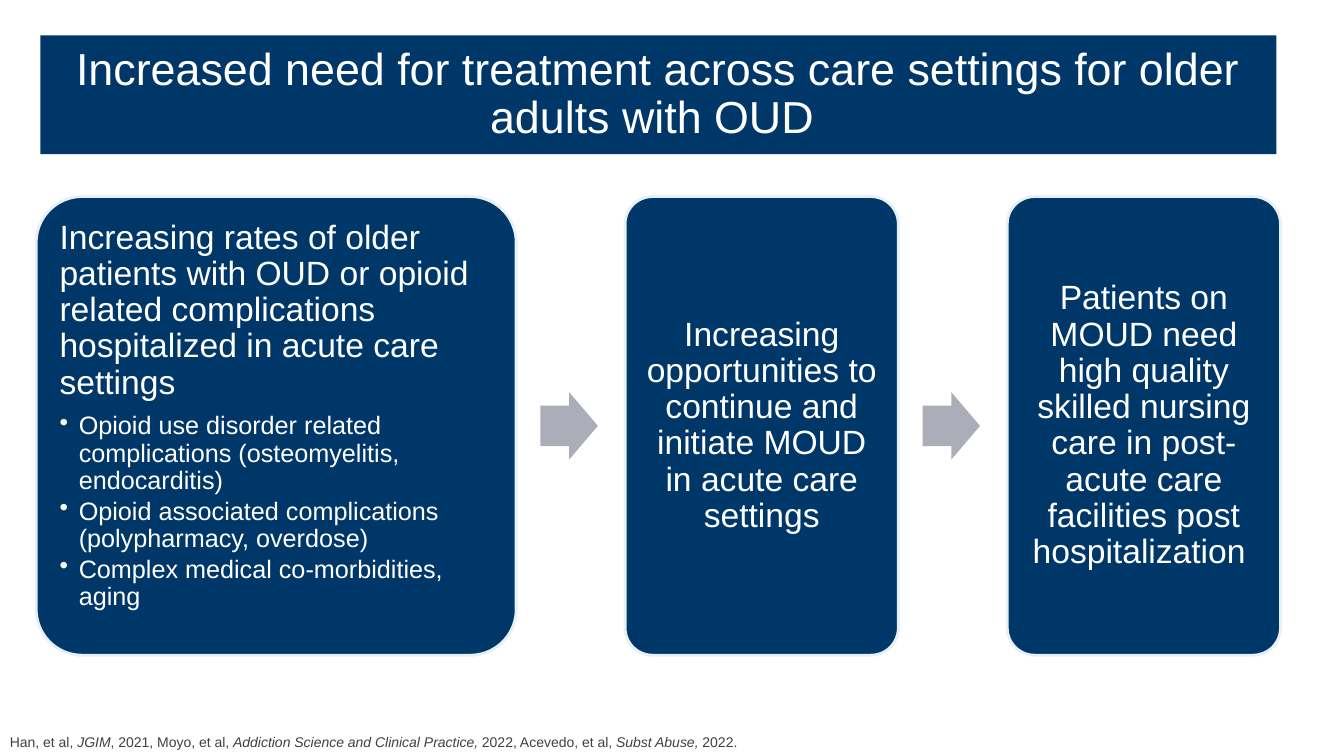
from lxml import etree
from pptx import Presentation
from pptx.dml.color import RGBColor
from pptx.enum.shapes import MSO_SHAPE
from pptx.enum.text import MSO_ANCHOR, MSO_AUTO_SIZE, PP_ALIGN
from pptx.oxml.ns import qn
from pptx.util import Inches, Pt

ROUNDED, ARROW = MSO_SHAPE.ROUNDED_RECTANGLE, MSO_SHAPE.RIGHT_ARROW
TOP, MIDDLE = MSO_ANCHOR.TOP, MSO_ANCHOR.MIDDLE
LEFT, CENTER = PP_ALIGN.LEFT, PP_ALIGN.CENTER
NO_FIT, GROW = MSO_AUTO_SIZE.NONE, MSO_AUTO_SIZE.SHAPE_TO_FIT_TEXT

COLORS = {"navy": "003769", "edge": "E6F0F5", "arrow": "ABAEB9",
          "white": "FFFFFF", "source": "414042"}
FONT = "Arial"
TITLE = "Increased need for treatment across care settings for older adults with OUD "
STEPS = [
    (4.76, "Increasing rates of older patients with OUD or opioid related complications "
           "hospitalized in acute care settings",
     ["Opioid use disorder related complications (osteomyelitis, endocarditis)",
      "Opioid associated complications (polypharmacy, overdose)",
      "Complex medical co-morbidities, aging"]),
    (2.71, "Increasing opportunities to continue and initiate MOUD in acute care settings", []),
    (2.71, "Patients on MOUD need high quality skilled nursing care in post-acute care "
           "facilities post hospitalization ", []),
]
SOURCES = [("Han, et al, ", False), ("JGIM", True), (", 2021, Moyo, et al, ", False),
           ("Addiction Science and Clinical Practice, ", True),
           ("2022, Acevedo, et al, ", False), ("Subst Abuse, ", True), ("2022.", False)]


def paint(shape, color):
    """Fill a shape with a named colour, without shadow or outline."""
    shape.shadow.inherit = False
    shape.fill.solid()
    shape.fill.fore_color.rgb = RGBColor.from_string(COLORS[color])
    shape.line.fill.background()


def set_frame(frame, inset, anchor):
    """Give a text frame wrapping, equal insets and an anchor."""
    frame.auto_size = NO_FIT
    frame.word_wrap = True
    frame.vertical_anchor = anchor
    frame.margin_left = frame.margin_right = Inches(inset)
    frame.margin_top = frame.margin_bottom = Inches(inset)


def set_paragraph(paragraph, size, color="white", align=LEFT, spacing=0.9, after=0.0):
    """Format a paragraph; the space after is a share of the text size."""
    paragraph.font.name = FONT
    paragraph.font.size = Pt(size)
    paragraph.font.color.rgb = RGBColor.from_string(COLORS[color])
    paragraph.alignment = align
    paragraph.line_spacing = spacing
    paragraph.space_before = Pt(0)
    paragraph.space_after = Pt(round(size * after, 1))


def add_bullet(paragraph, indent):
    """Hang a round bullet in front of a paragraph."""
    properties = paragraph._p.get_or_add_pPr()
    properties.set("marL", str(Inches(indent)))
    properties.set("indent", str(-Inches(indent)))
    etree.SubElement(properties, qn("a:buChar")).set("char", "•")
    defaults = properties.find(qn("a:defRPr"))
    if defaults is not None:
        properties.append(defaults)


def place_title(slide, left, top, width, height):
    """Turn the title placeholder into a navy banner."""
    title = slide.shapes.title
    title.left, title.top = Inches(left), Inches(top)
    title.width, title.height = Inches(width), Inches(height)
    paint(title, "navy")
    set_frame(title.text_frame, 0.16, MIDDLE)
    title.text_frame.text = TITLE
    set_paragraph(title.text_frame.paragraphs[0], 32, align=CENTER)


def add_step(slide, left, top, width, height, heading, details):
    """Add one rounded card with its heading and optional bullets."""
    card = slide.shapes.add_shape(ROUNDED, Inches(left), Inches(top),
                                  Inches(width), Inches(height))
    card.adjustments[0] = 0.1
    paint(card, "navy")
    card.line.color.rgb = RGBColor.from_string(COLORS["edge"])
    card.line.width = Pt(2)
    frame = card.text_frame
    set_frame(frame, 0.1, TOP if details else MIDDLE)
    frame.text = heading
    set_paragraph(frame.paragraphs[0], 24, align=LEFT if details else CENTER, after=0.35)
    for detail in details:
        bullet = frame.add_paragraph()
        bullet.text = detail
        bullet.level = 1
        set_paragraph(bullet, 18, after=0.15)
        add_bullet(bullet, 0.19)


def add_arrow(slide, left, middle, width, height):
    """Add a grey arrow centred on a height."""
    arrow = slide.shapes.add_shape(ARROW, Inches(left), Inches(middle - height / 2),
                                   Inches(width), Inches(height))
    arrow.adjustments[0], arrow.adjustments[1] = 0.6, 0.5
    paint(arrow, "arrow")


def add_process(slide, left, top, height):
    """Lay out the cards from left to right with arrows between them."""
    gap, arrow_width, pitch = 0.24, 0.57, 1.08
    for index, (width, heading, details) in enumerate(STEPS):
        add_step(slide, left, top, width, height, heading, details)
        if index < len(STEPS) - 1:
            add_arrow(slide, left + width + gap, top + height / 2, arrow_width, 0.67)
        left += width + pitch


def add_sources(slide, left, top, width, height):
    """Add the citation line with journals in italics."""
    box = slide.shapes.add_textbox(Inches(left), Inches(top), Inches(width), Inches(height))
    frame = box.text_frame
    frame.word_wrap = True
    frame.auto_size = GROW
    citation = frame.paragraphs[0]
    set_paragraph(citation, 10, "source", spacing=1.0)
    for text, italic in SOURCES:
        run = citation.add_run()
        run.text = text
        run.font.italic = italic


def main():
    """Build and save the slide."""
    deck = Presentation()
    deck.slide_width, deck.slide_height = Inches(13.33), Inches(7.5)
    slide = deck.slides.add_slide(deck.slide_layouts.get_by_name("Title Only"))
    place_title(slide, 0.4, 0.35, 12.26, 1.18)
    add_process(slide, 0.36, 1.95, 4.55)
    add_sources(slide, 0, 7.23, 8.57, 0.27)
    deck.save("out.pptx")


if __name__ == "__main__":
    main()
